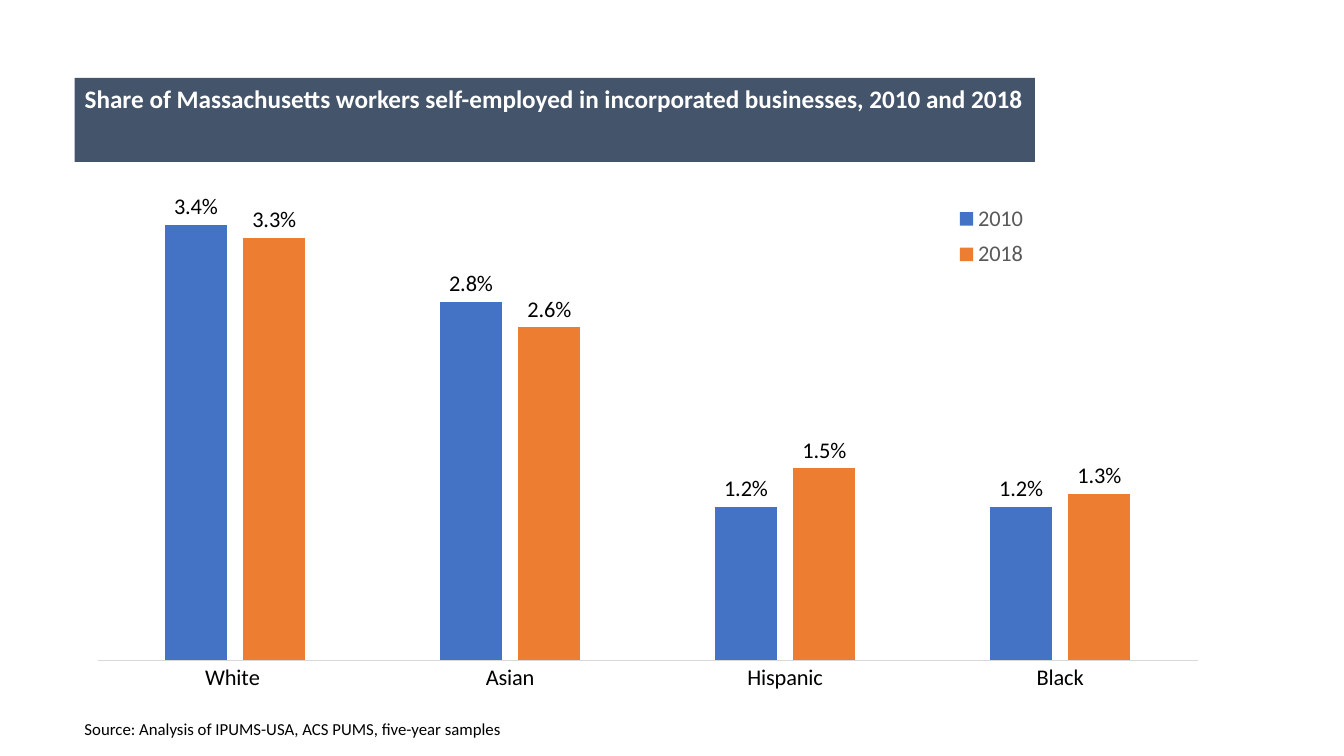
from dataclasses import dataclass

from lxml import etree
from pptx import Presentation
from pptx.chart.data import CategoryChartData as ChartData
from pptx.dml.color import RGBColor
from pptx.enum.chart import XL_CHART_TYPE as ChartType
from pptx.enum.chart import XL_LABEL_POSITION as LabelPosition
from pptx.enum.chart import XL_LEGEND_POSITION as LegendPosition
from pptx.enum.chart import XL_TICK_MARK as TickMark
from pptx.enum.text import MSO_ANCHOR as Anchor
from pptx.enum.text import MSO_AUTO_SIZE as AutoSize
from pptx.enum.text import PP_ALIGN as Align
from pptx.oxml.ns import qn
from pptx.util import Pt


@dataclass(frozen=True)
class Theme:
    font: str = "Calibri"
    banner: str = "44546A"
    white: str = "FFFFFF"
    text: str = "000000"
    legend: str = "595959"
    axis: str = "D9D9D9"
    title_size: float = 18
    chart_size: float = 16
    source_size: float = 12


@dataclass(frozen=True)
class YearSeries:
    year: str
    shares: tuple[float, ...]
    color: str


@dataclass(frozen=True)
class Area:
    left: float
    top: float
    width: float
    height: float

    def in_points(self) -> tuple:
        return Pt(self.left), Pt(self.top), Pt(self.width), Pt(self.height)


THEME = Theme()
PERCENT = "0.0%"
GROUPS = ("White ", "Asian", "Hispanic", "Black")
YEARS = (
    YearSeries("2010", (0.034, 0.028, 0.012, 0.012), "4472C4"),
    YearSeries("2018", (0.033, 0.026, 0.015, 0.013), "ED7D31"),
)
TITLE_AREA = Area(53.3, 55.6, 686, 29)
CHART_AREA = Area(53.3, 97.2, 818.6, 435.6)
SOURCE_AREA = Area(53.3, 509.8, 316, 21.8)
PLOT_SHARE = Area(0.02, 0.02, 0.96, 0.84)
LEGEND_SHARE = Area(0.76, 0.1, 0.08, 0.13)


def style_font(font, size: float, color: str, bold: bool = False) -> None:
    font.name = THEME.font
    font.size = Pt(size)
    font.bold = bold
    font.color.rgb = RGBColor.from_string(color)


def write_text(box, text: str, *, size: float, color: str, bold: bool = False) -> None:
    frame = box.text_frame
    frame.word_wrap = True
    frame.auto_size = AutoSize.SHAPE_TO_FIT_TEXT
    frame.vertical_anchor = Anchor.TOP
    para = frame.paragraphs[0]
    para.alignment = Align.LEFT
    span = para.add_run()
    span.text = text
    style_font(span.font, size, color, bold)


def set_layout(element, index: int, area: Area, inner: bool = False) -> None:
    for old in element.findall(qn("c:layout")):
        element.remove(old)
    layout = etree.Element(qn("c:layout"))
    manual = etree.SubElement(layout, qn("c:manualLayout"))
    settings = [("layoutTarget", "inner")] if inner else []
    settings += [("xMode", "edge"), ("yMode", "edge"), ("x", area.left),
                 ("y", area.top), ("w", area.width), ("h", area.height)]
    for name, value in settings:
        etree.SubElement(manual, qn(f"c:{name}")).set("val", str(value))
    element.insert(index, layout)


def add_title(page) -> None:
    title = page.shapes.title
    title.left, title.top, title.width, title.height = TITLE_AREA.in_points()
    title.fill.solid()
    title.fill.fore_color.rgb = RGBColor.from_string(THEME.banner)
    write_text(
        title,
        "Share of Massachusetts workers self-employed in incorporated businesses, 2010 and 2018",
        size=THEME.title_size, color=THEME.white, bold=True,
    )


def style_axes(chart) -> None:
    groups, shares = chart.category_axis, chart.value_axis
    groups.major_tick_mark = groups.minor_tick_mark = TickMark.NONE
    groups.format.line.color.rgb = RGBColor.from_string(THEME.axis)
    groups.format.line.width = Pt(0.75)
    style_font(groups.tick_labels.font, THEME.chart_size, THEME.text)
    shares.visible = False
    shares.has_major_gridlines = False
    shares.minimum_scale = 0
    shares.maximum_scale = 0.04
    shares.tick_labels.number_format = PERCENT
    shares.tick_labels.number_format_is_linked = False


def style_series(series, color: str) -> None:
    series.format.fill.solid()
    series.format.fill.fore_color.rgb = RGBColor.from_string(color)
    labels = series.data_labels
    labels.show_value = True
    labels.number_format = PERCENT
    labels.number_format_is_linked = False
    labels.position = LabelPosition.OUTSIDE_END
    style_font(labels.font, THEME.chart_size, THEME.text)


def add_share_chart(page) -> None:
    data = ChartData(number_format=PERCENT)
    data.categories = GROUPS
    for year in YEARS:
        data.add_series(year.year, year.shares)
    chart = page.shapes.add_chart(
        ChartType.COLUMN_CLUSTERED, *CHART_AREA.in_points(), data
    ).chart
    chart.has_title = False
    style_font(chart.font, 10, THEME.text)
    style_axes(chart)
    plot = chart.plots[0]
    plot.gap_width = 219
    plot.overlap = -27
    plot.vary_by_categories = False
    for series, year in zip(plot.series, YEARS):
        style_series(series, year.color)
    chart.has_legend = True
    legend = chart.legend
    legend.position = LegendPosition.BOTTOM
    legend.include_in_layout = False
    style_font(legend.font, THEME.chart_size, THEME.legend)
    plot_area = chart.element.find(f".//{qn('c:plotArea')}")
    legend_element = chart.element.find(f".//{qn('c:legend')}")
    set_layout(plot_area, 0, PLOT_SHARE, inner=True)
    set_layout(legend_element, 1, LEGEND_SHARE)


def main() -> None:
    deck = Presentation()
    deck.slide_width, deck.slide_height = Pt(960), Pt(540)
    page = deck.slides.add_slide(deck.slide_layouts[5])
    add_share_chart(page)
    add_title(page)
    source = page.shapes.add_textbox(*SOURCE_AREA.in_points())
    write_text(
        source, "Source: Analysis of IPUMS-USA, ACS PUMS, five-year samples",
        size=THEME.source_size, color=THEME.text,
    )
    deck.save("out.pptx")


if __name__ == "__main__":
    main()
